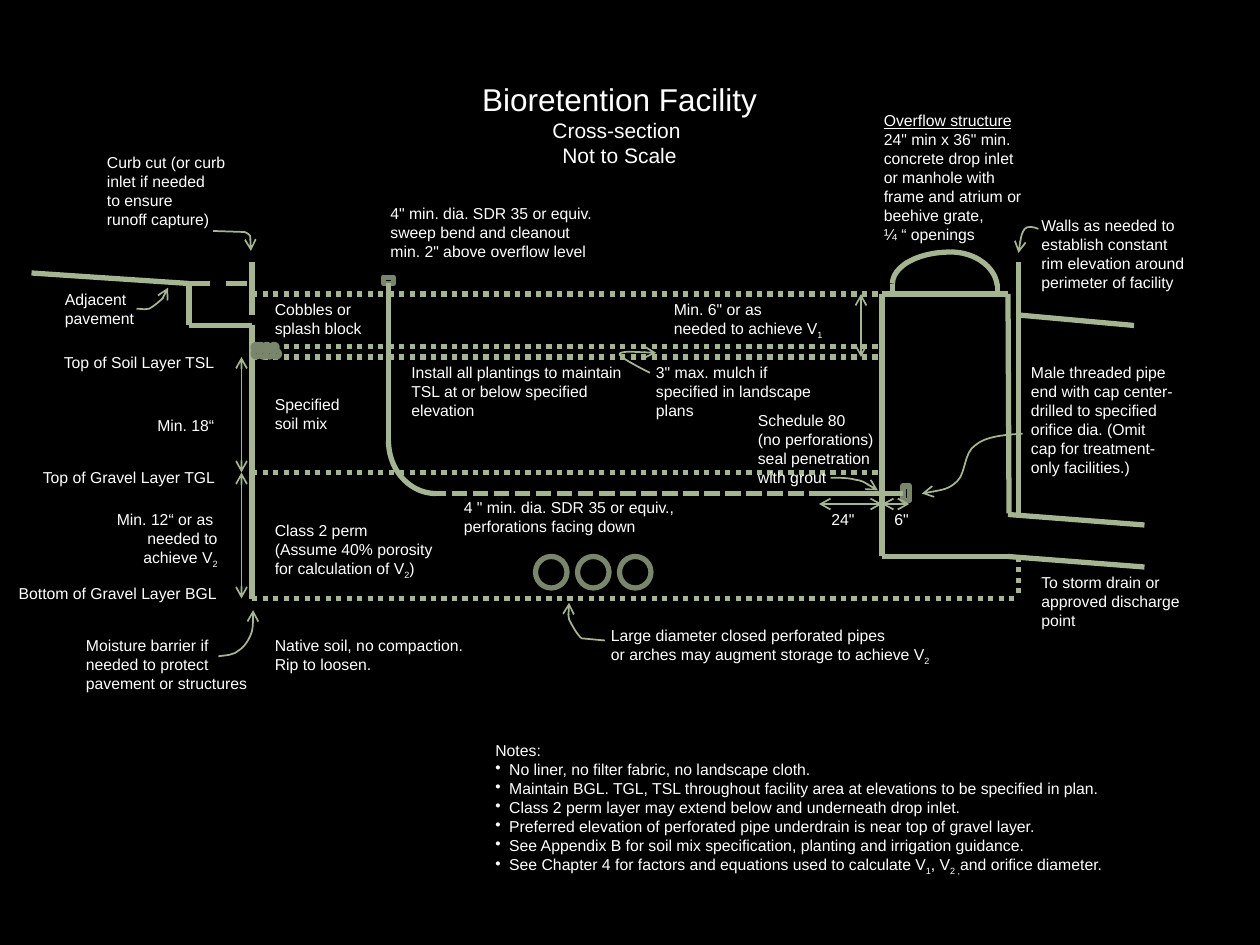
from lxml.etree import SubElement
from pptx import Presentation
from pptx.dml.color import RGBColor as RGB
from pptx.enum.dml import MSO_LINE as Dash
from pptx.enum.shapes import MSO_CONNECTOR, MSO_SHAPE as Shape
from pptx.enum.text import MSO_AUTO_SIZE, PP_ALIGN as Align
from pptx.oxml.ns import qn
from pptx.util import Inches, Pt

THEME = dict(bg=RGB(0, 0, 0), text=RGB(255, 255, 255), line=RGB(0xA5, 0xB5, 0x92),
             detail=RGB(0x7A, 0x86, 0x6C), font="Arial", body=9, subtitle=12, title=18,
             heavy=3, thin=1)

# Every position is in grid cells of 1/12 inch: 120 columns by 90 rows
COLS, ROWS = 120, 90
LEFT, WELL, OUTLET, RIGHT = 24, 84, 96, 97      # wall columns
RIM, MULCH, TSL, TGL, PIPE, BGL = 28, 33, 34, 45, 47, 57  # level rows

SOLID = [
    (LEFT, 31, LEFT, BGL), (LEFT, 25, LEFT, 30), (LEFT, 31, 18, 31), (18, 27, 18, 31),
    (3, 26, 18, 27), (WELL, RIM, WELL, 53), (WELL, 53, OUTLET, 53), (RIGHT, 25, RIGHT, 49),
    (WELL, RIM, OUTLET, RIM), (85, 27, 85, RIM), (95, 27, 95, RIM), (OUTLET, 53, 109, 54),
    (OUTLET, 49, 109, 50), (RIGHT, 30, 108, 31), (OUTLET, RIM, 96.1, 48.9),
]
DOTTED = [(LEFT, y, WELL, y) for y in (RIM, MULCH, TSL, TGL)] + [
    (LEFT, BGL, RIGHT, BGL), (RIGHT, 53, RIGHT, BGL)]
DIMENSIONS = [(23, TGL, 23, BGL), (23, TSL, 23, TGL), (82, RIM, 82, TSL),
              (78, 48, WELL, 48), (WELL, 48, 86.6, 48)]

# left, top, width, height, rotation, end angle
ARCS = [(87.5, 21.5, 6, 11, 270, 360), (86, 24, 9, 7, 0, 356.4), (37, 37, 9, 10, 180, 360)]
COBBLES = [(24.1 + 0.64 * i, 33.4) for i in range(4)] + [
    (x, 32.8) for x in (24.1, 24.5, 25.1, 25.8)]
STORAGE_PIPES = [(51 + 4 * i, 53) for i in range(3)]

# Start point, then segments: one point is straight, three points are a Bezier
LEADERS = [
    [(61.9, 35.5), [(60.5, 34.8), (59, 34), (59, 33.7)], [(59.2, 33.4), (62.5, 33.6), (62.5, 33.6)]],
    [(20.3, 22), [(23.3, 22.1)], [(24, 22.4), (23.9, 23.2), (23.9, 23.9)]],
    [(97.4, 41.3), [(95.6, 41.4), (93.8, 41.6), (92.9, 42.4)],
     [(91.8, 43.1), (92, 45), (91.2, 45.8)], [(90.4, 46.6), (89, 46.8), (87.8, 47)]],
    [(20.8, 62.5), [(21.6, 62.4), (22.3, 62.4), (22.8, 61.9)],
     [(23.3, 61.6), (23.8, 60.8), (24, 60.1)], [(24.1, 59.5), (24.1, 58.8), (24.1, 58.1)]],
    [(57.6, 61), [(55.4, 60.8)], [(55, 60.5), (54.5, 59.6), (54.2, 59)],
     [(54.1, 58.4), (54.1, 58), (54.2, 57.4)]],
    [(79.1, 45.5), [(79.9, 45.5), (80.8, 45.5), (81.5, 45.7)], [(82.2, 45.8), (82.9, 46.3), (83.6, 46.7)]],
    [(13, 29.4), [(13.3, 29.4), (13.7, 29.5), (14.2, 29.4)],
     [(14.6, 29.2), (15.2, 28.7), (15.6, 28.3)], [(15.8, 28.1), (15.8, 27.7), (16, 27.4)]],
    [(98.9, 21.8), [(98.4, 21.6), (97.9, 21.5), (97.6, 21.8)], [(97.3, 22.2), (97.1, 23.2), (97, 24.1)]],
]

# Text, left, top, width; ~n~ marks a subscript
LABELS = [
    ("Native soil, no compaction.\nRip to loosen.", 25, 60, 20.9),
    ("Class 2 perm\n(Assume 40% porosity\nfor calculation of V~2~)", 25, 49, 17.5),
    ("Specified\nsoil mix", 25, 37, 9.1),
    ('3" max. mulch if\nspecified in landscape\nplans', 61.3, 34, 17.8),
    ('Min. 6" or as\nneeded to achieve V~1~', 63, 28, 17.5),
    ("Curb cut (or curb\ninlet if needed\nto ensure\nrunoff capture)", 9, 14, 13.8),
    ('4" min. dia. SDR 35 or equiv.\nsweep bend and cleanout\nmin. 2" above overflow level', 36, 18.85, 22),
    ("Top of Gravel Layer TGL", 2.9, 44, 19.2),
    ("Bottom of Gravel Layer BGL", 0.6, 55, 21.5),
    ("Top of Soil Layer TSL", 4.9, 33, 17),
    ('24"', 78, 48, 5),
    ('6"', 84, 48, 4.2),
    ("Install all plantings to maintain\nTSL at or below specified\nelevation", 38, 34, 22.6),
    ("Cobbles or\nsplash block", 25, 28, 10.8),
    ("Moisture barrier if\nneeded to protect\npavement or structures", 7, 60, 17.9),
    ("Large diameter closed perforated pipes\nor arches may augment storage to achieve V~2~", 57, 59, 34),
    ("To storm drain or\napproved discharge\npoint", 98, 54, 22),
    ("Walls as needed to\nestablish constant\nrim elevation around\nperimeter of facility", 98, 20, 22),
]
RIGHT_LABELS = [("Min. 12“ or as \nneeded to\nachieve V~2~", 9.8, 48, 12.1),
                ("Min. 18“ ", 13.7, 39, 8.3)]
# Wrapped labels also give their number of lines
WRAPPED = [
    ('4 " min. dia. SDR 35 or equiv., perforations facing down', 43, 46.8, 24, 2),
    ("Schedule 80\n(no perforations)\nseal penetration with grout", 71, 38.5, 15, 4),
    ("Male threaded pipe end with cap center-drilled to specified orifice dia. "
     "(Omit cap for treatment-only facilities.)", 97, 34, 16, 6),
    ("Adjacent pavement", 5, 27, 9, 2),
]
OVERFLOW = ['Overflow structure\n24" min x 36" min.',
            "concrete drop inlet\nor manhole with frame and atrium or beehive grate,\n¼ “ openings"]
TITLE = ["Bioretention Facility\nCross-section ", "Not to Scale"]
NOTES = [
    "No liner, no filter fabric, no landscape cloth.",
    "Maintain BGL. TGL, TSL throughout facility area at elevations to be specified in plan.",
    "Class 2 perm layer may extend below and underneath drop inlet.",
    "Preferred elevation of perforated pipe underdrain is near top of gravel layer.",
    "See Appendix B for soil mix specification, planting and irrigation guidance.",
    "See Chapter 4 for factors and equations used to calculate V~1~, V~2 ,~and orifice diameter.",
]


def cells(*values):
    return [Inches(v / 12) for v in values]


def style_line(sp, color="line", weight="heavy", dash=None, ends=()):
    sp.line.color.rgb = THEME[color]
    sp.line.width = Pt(THEME[weight])
    if dash:
        sp.line.dash_style = dash
    for end in ends:
        SubElement(sp._element.spPr.find(qn("a:ln")), qn(f"a:{end}End"), type="arrow")


def add_line(points, **fmt):
    line = slide.shapes.add_connector(MSO_CONNECTOR.STRAIGHT, *cells(*points))
    style_line(line, **fmt)
    SubElement(line._element.spPr, qn("a:effectLst"))
    return line


def add_outline(kind, box, color="line"):
    sp = slide.shapes.add_shape(kind, *cells(*box))
    sp.shadow.inherit = False
    sp.fill.background()
    style_line(sp, color)
    return sp


def add_leader(start, *segments):
    points, last = [], start
    for seg in segments:
        points += seg if len(seg) == 3 else [last, seg[0], seg[0]]
        last = seg[-1]
    builder = slide.shapes.build_freeform(*cells(*start), scale=1.0)
    builder.add_line_segments([cells(*pt) for pt in points], close=False)
    sp = builder.convert_to_shape()
    sp.shadow.inherit = False
    sp.fill.background()
    style_line(sp, weight="thin", ends=["tail"])
    # Every three line points become one cubic curve
    path = next(sp._element.iter(qn("a:path")))
    steps = path.findall(qn("a:lnTo"))
    for i in range(0, len(steps), 3):
        curve = SubElement(path, qn("a:cubicBezTo"))
        for step in steps[i:i + 3]:
            curve.append(step[0])
            path.remove(step)


def add_text(text, left, top, width, lines=None, wrap=False, align=Align.LEFT,
             size="body", first=None, bullets=False):
    paragraphs = [text] if isinstance(text, str) else text
    lines = lines or sum(t.count("\n") + 1 for t in paragraphs)
    tf = slide.shapes.add_textbox(*cells(left, top, width, 1.2 + 1.83 * lines)).text_frame
    tf.word_wrap = wrap
    tf.auto_size = MSO_AUTO_SIZE.SHAPE_TO_FIT_TEXT
    for i, para in enumerate(paragraphs):
        p = tf.add_paragraph() if i else tf.paragraphs[0]
        p.alignment = align
        if bullets and i:
            pPr = p._p.get_or_add_pPr()
            pPr.set("marL", str(Inches(0.11)))
            pPr.set("indent", str(-Inches(0.11)))
            SubElement(pPr, qn("a:buChar"), char="•")
        for j, row in enumerate(para.split("\n")):
            if j:
                p.add_line_break()
            special = first if first and i == j == 0 else {}
            for k, piece in enumerate(row.split("~")):
                if not piece:
                    continue
                r = p.add_run()
                r.text = piece
                r.font.name, r.font.color.rgb = THEME["font"], THEME["text"]
                r.font.size = Pt(THEME[special.get("size", size)])
                if special.get("underline"):
                    r.font.underline = True
                if k % 2:
                    r.font._element.set("baseline", "-25000")


prs = Presentation()
prs.slide_width, prs.slide_height = cells(COLS, ROWS)
slide = prs.slides.add_slide(prs.slide_layouts[6])
slide.background.fill.solid()
slide.background.fill.fore_color.rgb = THEME["bg"]

# Walls, pavement and layer levels
for points in SOLID:
    add_line(points)
for points in DOTTED:
    add_line(points, dash=Dash.ROUND_DOT)
add_line((18, 27, LEFT, 27), dash=Dash.DASH)

# Grate dome and sweep bend
for *box, rotation, end in ARCS:
    arc = add_outline(Shape.ARC, box)
    arc.rotation = rotation
    arc.adjustments[0], arc.adjustments[1] = 162, end % 360 * 0.6

# Underdrain and cleanout, joined to their caps
orifice_cap = add_outline(Shape.RECTANGLE, (86, 46.3, 0.6, 1.4), "detail")
cleanout_cap = add_outline(Shape.RECTANGLE, (36.5, 26.4, 1, 0.6), "detail")
add_line((41, PIPE, 78, PIPE), dash=Dash.SQUARE_DOT)
add_line((78, PIPE, 86, PIPE)).end_connect(orifice_cap, 1)
add_line((37, 27, 37, 42)).begin_connect(cleanout_cap, 2)

# Cobbles and storage pipes
for spots, size in ((COBBLES, 0.6), (STORAGE_PIPES, 3)):
    for x, y in spots:
        add_outline(Shape.OVAL, (x, y, size, size), "detail")

# Dimensions and leaders
for points in DIMENSIONS:
    add_line(points, weight="thin", ends=["head", "tail"])
for leader in LEADERS:
    add_leader(*leader)

# Text
for label in LABELS:
    add_text(*label)
for label in RIGHT_LABELS:
    add_text(*label, align=Align.RIGHT)
for label in WRAPPED:
    add_text(*label, wrap=True)
add_text(OVERFLOW, 83, 10, 17, 7, wrap=True, first=dict(underline=True))
add_text(TITLE, 37, 7, 44, 4.7, wrap=True, align=Align.CENTER, size="subtitle", first=dict(size="title"))
add_text(["Notes:"] + NOTES, 46, 70, 66, wrap=True, bullets=True)

prs.save("out.pptx")
